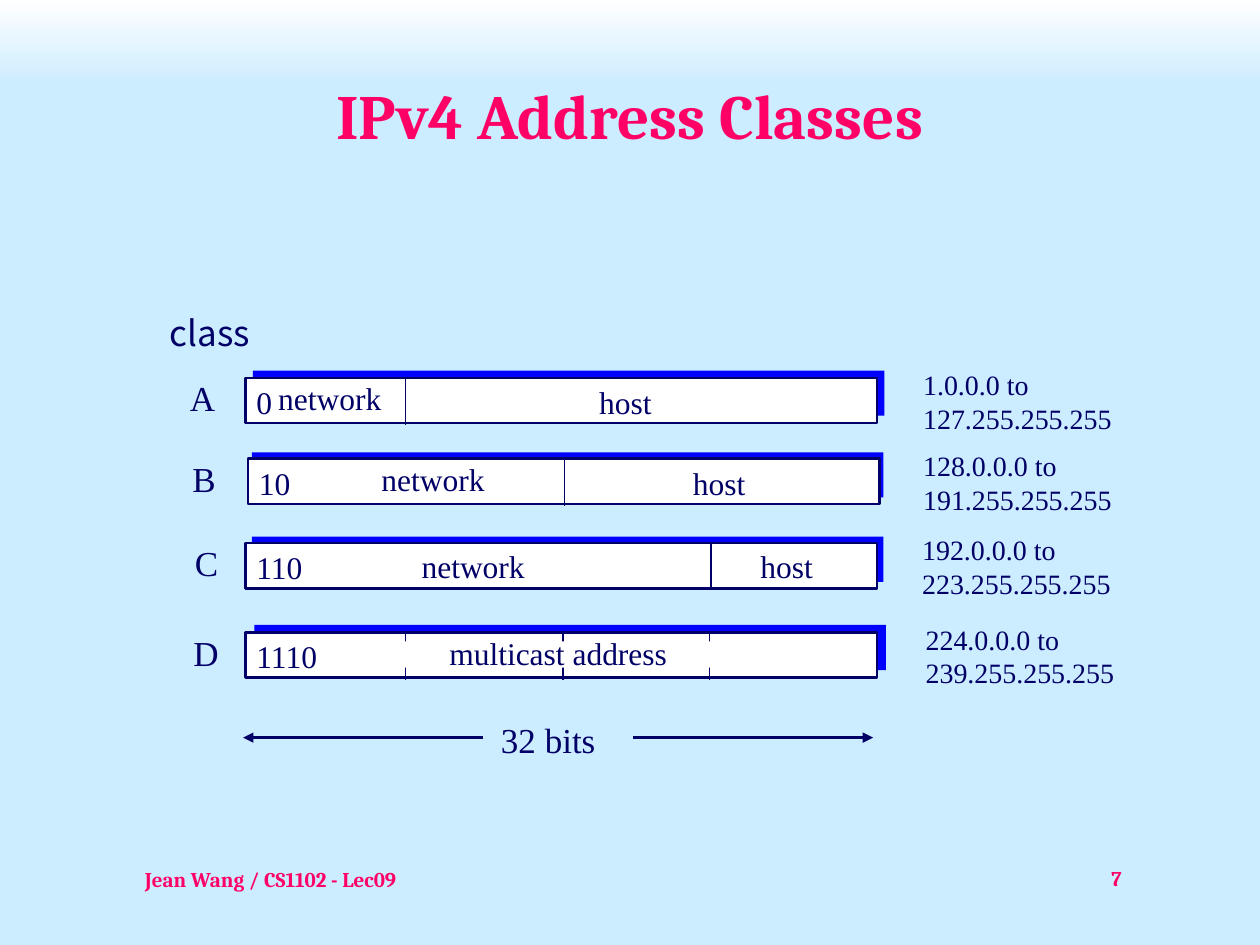
import pptx
import pptx.util
import pptx.dml.color
import pptx.enum.shapes
import pptx.enum.text
import pptx.oxml
import pptx.oxml.ns

Cm, Pt = pptx.util.Cm, pptx.util.Pt
RGBColor = pptx.dml.color.RGBColor
ALIGN = pptx.enum.text.PP_ALIGN

NAVY = RGBColor(0x00, 0x00, 0x66)
PINK = RGBColor(0xFF, 0x00, 0x66)
BLUE = RGBColor(0x00, 0x00, 0xFF)
SKY = RGBColor(0xCC, 0xEC, 0xFF)
WHITE = RGBColor(0xFF, 0xFF, 0xFF)

SERIF, HEADING, SANS = "Times New Roman", "Cambria", "Noto Sans CJK KR"
BAR_WIDTH, BAR_HEIGHT = 12.73, 0.91

# All lengths are in cm; fields are (text, x, y, width) and x, y are
# relative to the top left corner of the bar.
CLASSES = [
    dict(letter="A", left=4.95, top=7.62, bits="0", bits_width=0.84,
         shadow=(0.15, -0.15), letter_x=-1.37, range_x=13.41, dividers=[3.23],
         fields=[("network", 0.41, -0.1, 2.59), ("host", 6.88, -0.03, 1.57)],
         addresses="1.0.0.0 to\n127.255.255.255"),
    dict(letter="B", left=5.0, top=9.25, bits="10", bits_width=1.14,
         shadow=(0.08, -0.13), letter_x=-1.37, range_x=13.36, dividers=[6.38],
         fields=[("network", 2.44, -0.1, 2.59), ("host", 8.72, -0.03, 1.57)],
         addresses="128.0.0.0 to\n191.255.255.255"),
    dict(letter="C", left=4.95, top=10.95, bits="110", bits_width=1.47,
         shadow=(0.13, -0.13), letter_x=-1.27, range_x=13.39, dividers=[9.38],
         fields=[("network", 3.3, -0.05, 2.59), ("host", 10.13, -0.05, 1.57)],
         addresses="192.0.0.0 to\n223.255.255.255"),
    dict(letter="D", left=4.95, top=12.75, bits="1110", bits_width=1.78,
         shadow=(0.18, -0.15), letter_x=-1.3, range_x=13.46,
         dividers=[3.23, 6.4, 9.35], broken=True,
         fields=[("multicast address", 3.86, -0.1, 4.9)],
         addresses="224.0.0.0 to\n239.255.255.255"),
]


def write(shape, text, size=18, font=SERIF, color=NAVY, bold=False,
          align=ALIGN.LEFT, wrap=False):
    frame = shape.text_frame
    frame.word_wrap = wrap
    frame.text = text
    for paragraph in frame.paragraphs:
        paragraph.alignment = align
        paragraph.font.size = Pt(size)
        paragraph.font.name = font
        paragraph.font.bold = bold
        paragraph.font.color.rgb = color


def add_label(slide, text, left, top, width, height, **style):
    label = slide.shapes.add_textbox(Cm(left), Cm(top), Cm(width), Cm(height))
    write(label, text, **style)


def add_rect(slide, left, top, width, height, fill, outlined=False):
    rect = slide.shapes.add_shape(
        pptx.enum.shapes.MSO_SHAPE.RECTANGLE,
        Cm(left), Cm(top), Cm(width), Cm(height))
    rect.shadow.inherit = False
    rect.fill.solid()
    rect.fill.fore_color.rgb = fill
    if outlined:
        rect.line.color.rgb = NAVY
        rect.line.width = Pt(1.5)
    else:
        rect.line.fill.background()


def add_line(slide, x1, y1, x2, y2, width, arrow=False):
    line = slide.shapes.add_connector(
        pptx.enum.shapes.MSO_CONNECTOR.STRAIGHT, Cm(x1), Cm(y1), Cm(x2), Cm(y2))
    line.line.color.rgb = NAVY
    line.line.width = Pt(width)
    properties = line.element.spPr
    qn = pptx.oxml.ns.qn
    if arrow:
        head = properties.find(qn("a:ln")).makeelement(
            qn("a:tailEnd"), {"type": "triangle"})
        properties.find(qn("a:ln")).append(head)
    properties.append(properties.makeelement(qn("a:effectLst"), {}))


def add_background(slide):
    fill = slide.background.fill
    fill.gradient()
    fill.gradient_angle = 270
    for stop, position, color in zip(fill.gradient_stops, (0, 0.09), (WHITE, SKY)):
        stop.position = position
        stop.color.rgb = color


def add_title(slide, left, top, width, height):
    title = slide.shapes.title
    title.left, title.top = Cm(left), Cm(top)
    title.width, title.height = Cm(width), Cm(height)
    write(title, "IPv4 Address Classes", size=36, font=HEADING, color=PINK,
          bold=True, align=ALIGN.CENTER, wrap=True)
    title.text_frame.vertical_anchor = pptx.enum.text.MSO_ANCHOR.MIDDLE


def add_class_row(slide, left, top, letter, bits, bits_width, shadow, letter_x,
                  range_x, dividers, fields, addresses, broken=False):
    # Bar and its offset shadow
    add_rect(slide, left + shadow[0], top + shadow[1], BAR_WIDTH, BAR_HEIGHT, BLUE)
    add_rect(slide, left, top, BAR_WIDTH, BAR_HEIGHT, WHITE, outlined=True)

    # Field boundaries, with a gap behind text that spans them
    for x in dividers:
        add_line(slide, left + x, top, left + x, top + 0.95, 0.75)
        if broken:
            add_rect(slide, left + x - 0.14, top + 0.18, 0.25, 0.53, WHITE)

    # Leading bits and field names
    add_label(slide, bits, left - 0.03, top - 0.03, bits_width, 1.02)
    for name, x, y, width in fields:
        add_label(slide, name, left + x, top + y, width, 1.02)

    # Class letter and address range on either side
    add_label(slide, letter, left + letter_x, top - 0.15, 1.0, 1.09, size=20)
    add_label(slide, addresses, left + range_x, top - 0.33, 4.32, 1.63, size=16)


def add_bit_scale(slide, left, top, width):
    arrow_length, middle = 4.84, top + 0.52
    right = left + width
    add_label(slide, "32 bits", left + 4.95, top, 2.41, 1.09, size=20)
    add_line(slide, right - arrow_length, middle, right, middle, 1.5, arrow=True)
    add_line(slide, left + arrow_length, middle, left, middle, 1.5, arrow=True)


def add_footer(slide, left, top, width, height):
    style = dict(size=12, font=HEADING, color=PINK, bold=True, wrap=True)
    add_label(slide, "Jean Wang / CS1102 - Lec09", left, top, 7.24, height, **style)
    number_width = 5.28
    add_label(slide, "7", left + width - number_width, top - 0.03,
              number_width, height, align=ALIGN.CENTER, **style)


def main():
    deck = pptx.Presentation()
    deck.slide_width, deck.slide_height = Cm(25.4), Cm(19.05)
    slide = deck.slides.add_slide(deck.slide_layouts[5])
    add_background(slide)
    add_title(slide, 1.9, 0.71, 21.59, 3.18)
    add_label(slide, "class", 3.17, 6.15, 2.29, 1.09, size=20, font=SANS)
    for address_class in CLASSES:
        add_class_row(slide, **address_class)
    add_bit_scale(slide, 4.9, 14.35, 12.7)
    add_footer(slide, 2.67, 17.35, 22.48, 1.27)
    deck.save("out.pptx")


if __name__ == "__main__":
    main()
